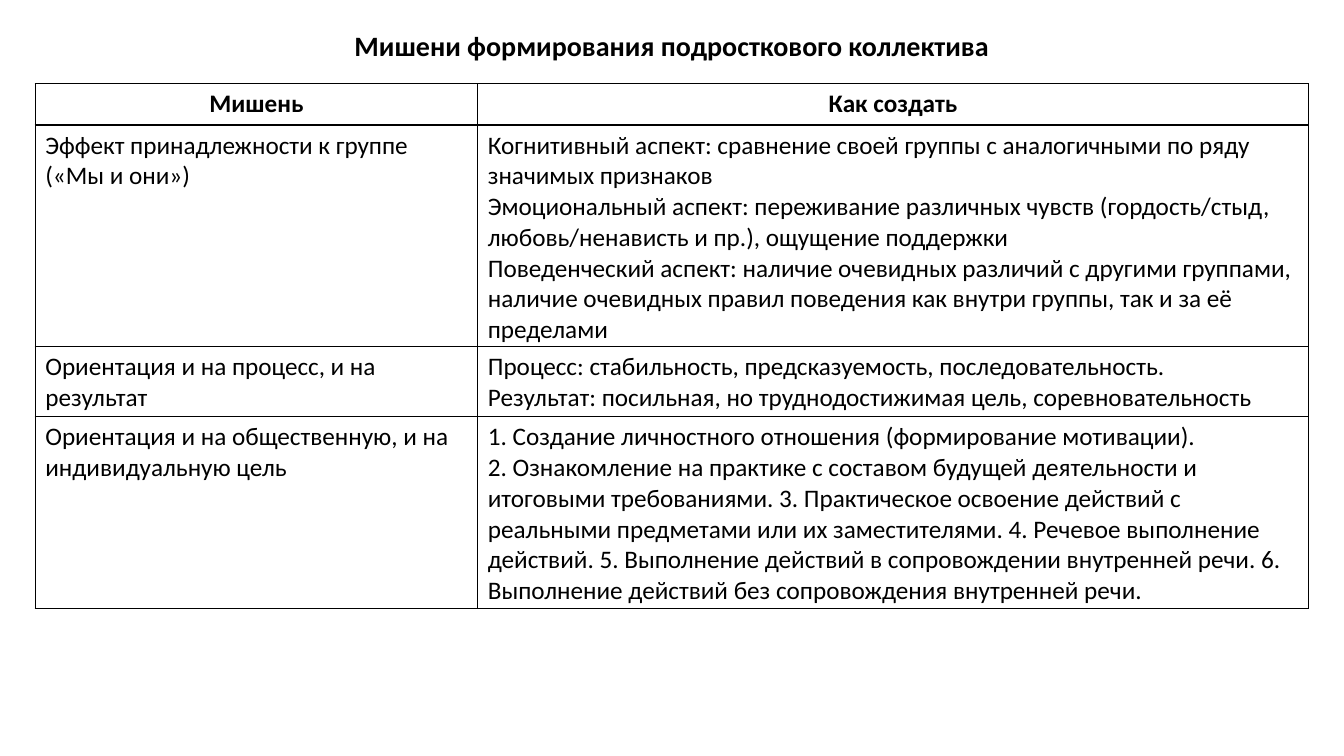
from lxml import etree
from pptx import Presentation
from pptx.dml.color import RGBColor
from pptx.enum.text import MSO_ANCHOR, PP_ALIGN
from pptx.oxml.ns import qn
from pptx.util import Pt

CENTER, LEFT, TOP = PP_ALIGN.CENTER, PP_ALIGN.LEFT, MSO_ANCHOR.TOP
COLORS = {"text": "000000", "border": "000000"}
FONT = "Calibri"

TITLE = "Мишени формирования подросткового коллектива"
ROWS = [
    (["Мишень"], ["Как создать"]),
    (
        ["Эффект принадлежности к группе («Мы и они»)"],
        [
            "Когнитивный аспект: сравнение своей группы с аналогичными по ряду значимых признаков",
            "Эмоциональный аспект: переживание различных чувств (гордость/стыд, "
            "любовь/ненависть и пр.), ощущение поддержки",
            "Поведенческий аспект: наличие очевидных различий с другими группами, "
            "наличие очевидных правил поведения как внутри группы, так и за её пределами",
        ],
    ),
    (
        ["Ориентация и на процесс, и на результат"],
        [
            "Процесс: стабильность, предсказуемость, последовательность.",
            "Результат: посильная, но труднодостижимая цель, соревновательность",
        ],
    ),
    (
        ["Ориентация и на общественную, и на индивидуальную цель"],
        [
            "1. Создание личностного отношения (формирование мотивации).",
            "2. Ознакомление на практике с составом будущей деятельности и итоговыми "
            "требованиями. 3. Практическое освоение действий с реальными предметами или "
            "их заместителями. 4. Речевое выполнение действий. 5. Выполнение действий в "
            "сопровождении внутренней речи. 6. Выполнение действий без сопровождения "
            "внутренней речи.",
        ],
    ),
]
COLUMN_WIDTHS = [316.1, 593.3]
ROW_HEIGHTS = [29.5, 158.5, 50, 137]


def write_text(frame, lines, align, size, bold):
    for index, line in enumerate(lines):
        para = frame.add_paragraph() if index else frame.paragraphs[0]
        para.alignment = align
        span = para.add_run()
        span.text = line
        for name, value in {"name": FONT, "size": Pt(size), "bold": bold}.items():
            setattr(span.font, name, value)
        span.font.color.rgb = RGBColor.from_string(COLORS["text"])


def add_borders(cell):
    properties = cell._tc.get_or_add_tcPr()
    for position, side in enumerate(("lnL", "lnR", "lnT", "lnB")):
        line = etree.Element(qn(f"a:{side}"), w=str(Pt(1)))
        fill = etree.SubElement(line, qn("a:solidFill"))
        etree.SubElement(fill, qn("a:srgbClr"), val=COLORS["border"])
        properties.insert(position, line)


deck = Presentation()
deck.slide_width, deck.slide_height = Pt(960), Pt(540)
page = deck.slides.add_slide(deck.slide_layouts[6])

title_box = page.shapes.add_textbox(Pt(94.3), Pt(16.6), Pt(771.1), Pt(31.5))
title_box.text_frame.word_wrap = True
write_text(title_box.text_frame, [TITLE], CENTER, 20, True)

table = page.shapes.add_table(
    len(ROWS), len(COLUMN_WIDTHS), Pt(25.2), Pt(59.8),
    Pt(sum(COLUMN_WIDTHS)), Pt(sum(ROW_HEIGHTS)),
).table
table.horz_banding = False
for column, width in zip(table.columns, COLUMN_WIDTHS):
    column.width = Pt(width)
for row, height in zip(table.rows, ROW_HEIGHTS):
    row.height = Pt(height)

CELL_FORMAT = {
    "margin_left": Pt(7.2),
    "margin_right": Pt(7.2),
    "margin_top": Pt(3.6),
    "margin_bottom": Pt(0),
    "vertical_anchor": TOP,
}
for row_index, texts in enumerate(ROWS):
    is_header = row_index == 0
    for column_index, lines in enumerate(texts):
        cell = table.cell(row_index, column_index)
        for name, value in CELL_FORMAT.items():
            setattr(cell, name, value)
        cell.fill.background()
        add_borders(cell)
        write_text(cell.text_frame, lines, CENTER if is_header else LEFT, 18, is_header)

deck.save("out.pptx")
